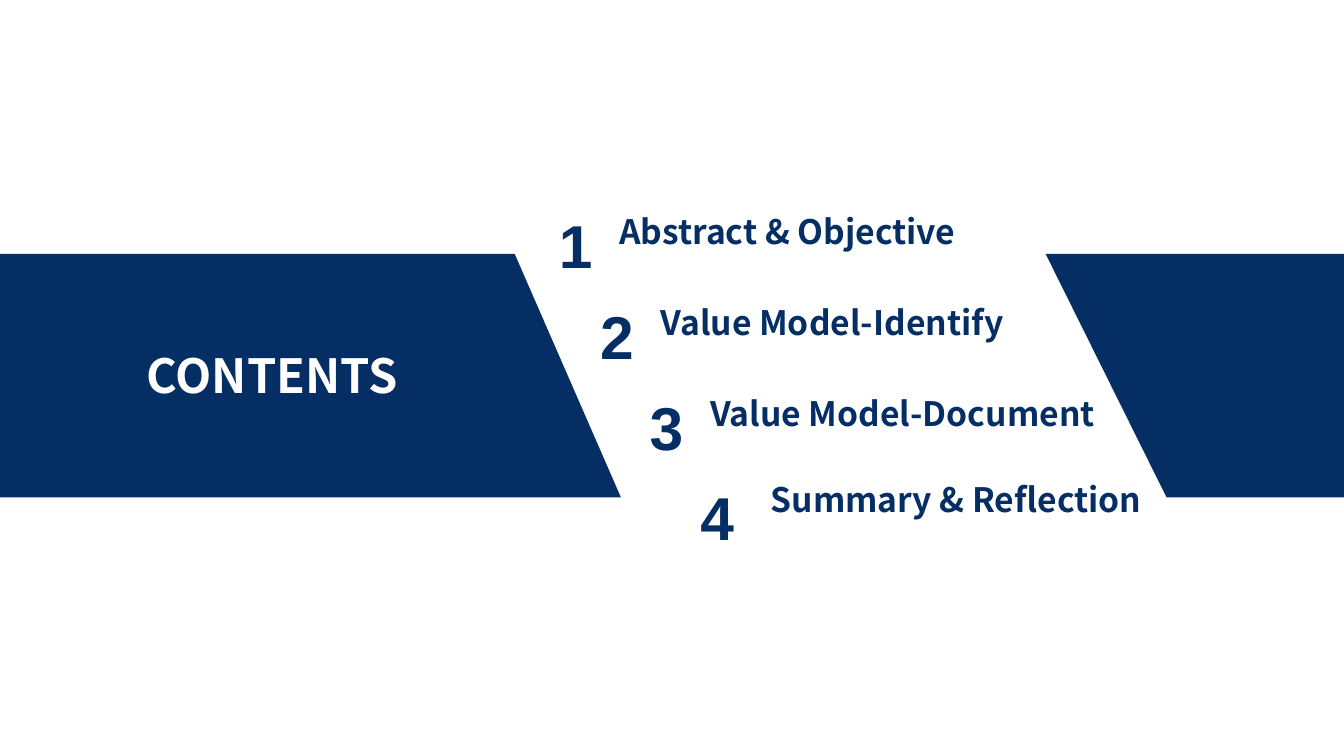
import pptx
import pptx.util
import pptx.dml.color
import pptx.enum.text

NAVY = pptx.dml.color.RGBColor(0x05, 0x2E, 0x65)
WHITE = pptx.dml.color.RGBColor(0xFF, 0xFF, 0xFF)
SANS = "Noto Sans CJK SC"
WIDE = 11.11
HIGH = 6.25
TOP = 0.336 * HIGH
BASE = 0.658 * HIGH
ROW = 0.12 * HIGH
INCH = pptx.util.Inches

deck = pptx.Presentation()
deck.slide_width = INCH(WIDE)
deck.slide_height = INCH(HIGH)
slide = deck.slides.add_slide(deck.slide_layouts[5])
shapes = slide.shapes


def write(frame, text, size, face, color):
    run = frame.paragraphs[0].add_run()
    run.text = text
    run.font.size = pptx.util.Pt(size)
    run.font.name = face
    run.font.bold = True
    run.font.color.rgb = color


def label(left, top, width, height, text, size, face, wrap, inset):
    box = shapes.add_textbox(INCH(left), INCH(top), INCH(width), INCH(height))
    frame = box.text_frame
    frame.word_wrap = wrap
    frame.margin_left = frame.margin_right = INCH(0.09)
    frame.margin_top = frame.margin_bottom = INCH(inset)
    write(frame, text, size, face, NAVY)
    return frame.paragraphs[0]


bands = [
    [(0.778 * WIDE, TOP), (WIDE, TOP), (WIDE, BASE), (0.868 * WIDE, BASE)],
    [(0, TOP), (0.383 * WIDE, TOP), (0.462 * WIDE, BASE), (0, BASE)],
]
for points in bands:
    start, *rest = [(INCH(x), INCH(y)) for x, y in points]
    path = shapes.build_freeform(*start)
    path.add_line_segments(rest, close=True)
    band = path.convert_to_shape()
    band.shadow.inherit = False
    band.fill.solid()
    band.fill.fore_color.rgb = NAVY
    band.line.fill.background()

title = shapes.title
shapes._spTree.append(title._element)
title.left, title.top = INCH(0.011 * WIDE), INCH(0.381 * HIGH)
title.width, title.height = INCH(0.383 * WIDE), INCH(0.23 * HIGH)
frame = title.text_frame
frame.word_wrap = False
frame.auto_size = pptx.enum.text.MSO_AUTO_SIZE.NONE
frame.vertical_anchor = pptx.enum.text.MSO_ANCHOR.MIDDLE
frame.paragraphs[0].alignment = pptx.enum.text.PP_ALIGN.CENTER
write(frame, "CONTENTS", 28, SANS, WHITE)

items = [
    (4.53, 5.03, 0, "Abstract & Objective"),
    (4.87, 5.37, 0, "Value Model-Identify"),
    (5.28, 5.78, 0, "Value Model-Document"),
    (5.70, 6.28, -0.04, "Summary & Reflection"),
]
for place, (left, start, shift, text) in enumerate(items):
    top = 0.261 * HIGH + place * ROW
    label(left, top, 0.03 * WIDE, 0.08 * HIGH, str(place + 1), 36, "Arial", False, 0.09)
    line = label(start, top + shift, 0.34 * WIDE, 0.075 * HIGH, text, 20, SANS, True, 0.05)
    line.line_spacing = 1.2

deck.save("out.pptx")
